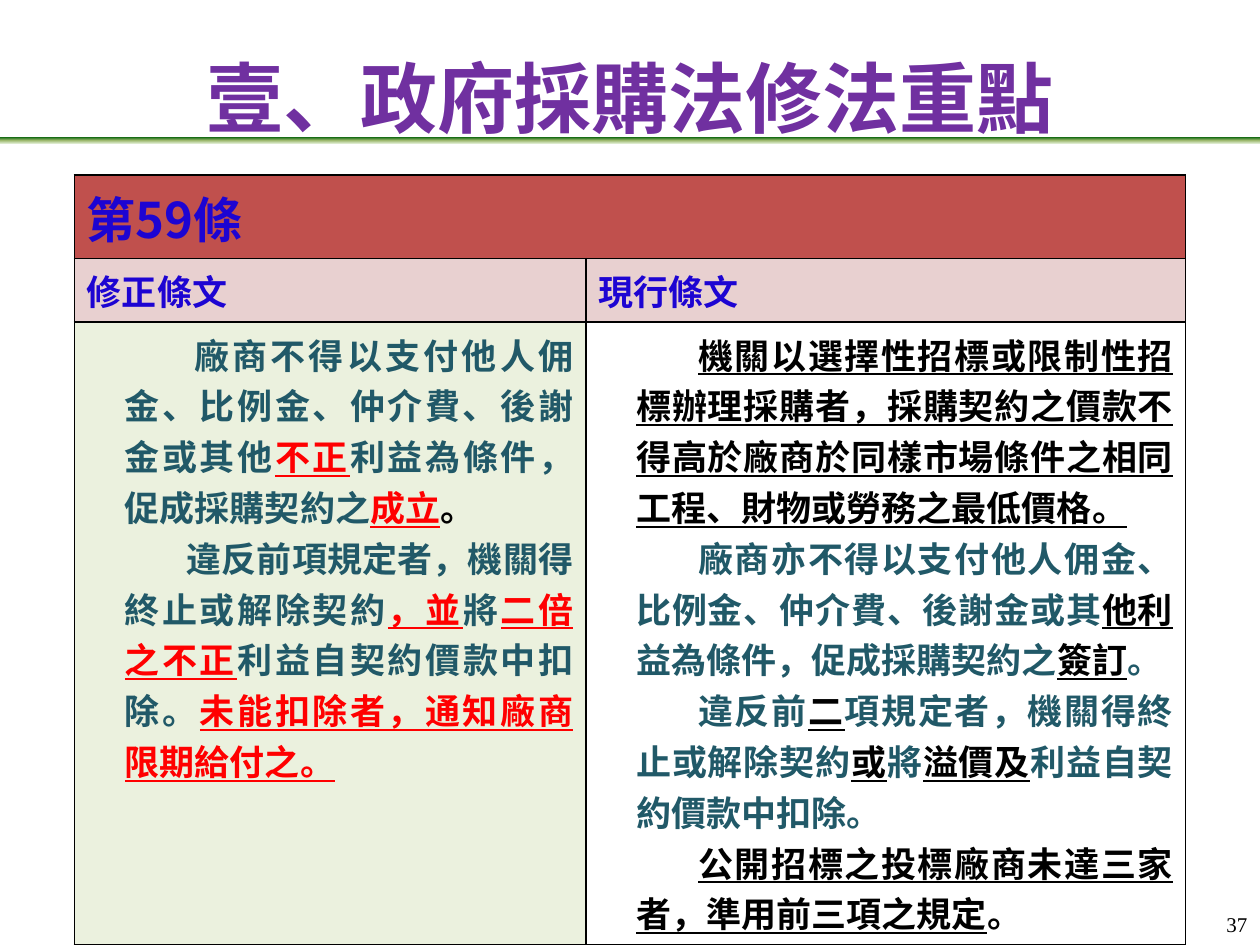
from lxml import etree
from pptx import Presentation
from pptx.dml.color import RGBColor
from pptx.enum.shapes import MSO_SHAPE
from pptx.enum.text import MSO_ANCHOR, PP_ALIGN
from pptx.oxml.ns import qn
from pptx.util import Inches, Pt

RECTANGLE = MSO_SHAPE.RECTANGLE
MIDDLE, BOTTOM = MSO_ANCHOR.MIDDLE, MSO_ANCHOR.BOTTOM
LEFT, CENTER, RIGHT, JUSTIFY = PP_ALIGN.LEFT, PP_ALIGN.CENTER, PP_ALIGN.RIGHT, PP_ALIGN.JUSTIFY
HEADING_FONT, NUMBER_FONT = "Noto Sans CJK SC", "Times New Roman"
BLACK, RED, TEAL, BLUE, PURPLE = "000000", "FF0000", "215968", "1D04D2", "7030A0"
BAR_STOPS = [(0, "156B13"), (50, "9CB86E"), (100, "DDEBCF")]
COLUMN_WIDTHS = [4.06, 4.76]
ROW_HEIGHTS = [0.66, 0.5, 4.94]
FIRST_LINE = 0.49

AMENDED = [
    (0.55, [("廠商不得以支付他人佣金、比例金、仲介費、後謝金或其他", TEAL, False),
            ("不正", RED, True),
            ("利益為條件，促成採購契約之", TEAL, False),
            ("成立", RED, True),
            ("。", BLACK, False)]),
    (FIRST_LINE, [("違反前項規定者，機關得終止或解除契約", TEAL, False),
                  ("，並", RED, True),
                  ("將", TEAL, False),
                  ("二倍之不正", RED, True),
                  ("利益自契約價款中扣除。", TEAL, False),
                  ("未能扣除者，通知廠商限期給付之。", RED, True)]),
]
CURRENT = [
    (FIRST_LINE, [("機關以選擇性招標或限制性招標辦理採購者，採購契約之價款不得高於廠商於"
                   "同樣市場條件之相同工程、財物或勞務之最低價格。", BLACK, True)]),
    (FIRST_LINE, [("廠商亦不得以支付他人佣金、比例金、仲介費、後謝金或其", TEAL, False),
                  ("他利", BLACK, True),
                  ("益為條件，促成採購契約之", TEAL, False),
                  ("簽訂", BLACK, True),
                  ("。", TEAL, False)]),
    (FIRST_LINE, [("違反前", TEAL, False),
                  ("二", BLACK, True),
                  ("項規定者，機關得終止或解除契約", TEAL, False),
                  ("或", BLACK, True),
                  ("將", TEAL, False),
                  ("溢價及", BLACK, True),
                  ("利益自契約價款中扣除。", TEAL, False)]),
    (FIRST_LINE, [("公開招標之投標廠商未達三家者，準用前三項之規定", BLACK, True),
                  ("。", BLACK, False)]),
]


def color(value):
    return RGBColor.from_string(value)


def add_run(paragraph, text, size, value, bold=True, underline=False, font_name=HEADING_FONT):
    run = paragraph.add_run()
    run.text = text
    font = run.font
    font.size, font.bold, font.underline, font.name = Pt(size), bold, underline, font_name
    font.color.rgb = color(value)
    properties = run._r.get_or_add_rPr()
    etree.SubElement(properties, qn("a:ea")).set("typeface", font_name)


def add_bar(slide, box):
    bar = slide.shapes.add_shape(RECTANGLE, *map(Inches, box))
    bar.shadow.inherit = False
    bar.line.fill.background()
    bar.fill.gradient()
    gradient = bar.element.spPr.find(qn("a:gradFill"))
    stops = gradient.find(qn("a:gsLst"))
    for stop in list(stops):
        stops.remove(stop)
    for position, value in BAR_STOPS:
        stop = etree.SubElement(stops, qn("a:gs"), pos=str(position * 1000))
        etree.SubElement(stop, qn("a:srgbClr"), val=value)
    gradient.find(qn("a:lin")).set("ang", str(90 * 60000))
    slide.shapes.title.element.addprevious(bar.element)


def add_title(slide, box):
    title = slide.shapes.title
    title.left, title.top, title.width, title.height = map(Inches, box)
    frame = title.text_frame
    frame.vertical_anchor = MIDDLE
    frame.word_wrap = True
    paragraph = frame.paragraphs[0]
    paragraph.alignment = CENTER
    add_run(paragraph, "壹、政府採購法修法重點", 44, PURPLE)


def add_borders(cell):
    properties = cell._tc.get_or_add_tcPr()
    for index, side in enumerate(["a:lnL", "a:lnR", "a:lnT", "a:lnB"]):
        line = etree.Element(qn(side), w=str(Pt(1)))
        fill = etree.SubElement(line, qn("a:solidFill"))
        etree.SubElement(fill, qn("a:srgbClr"), val=BLACK)
        properties.insert(index, line)


def fill_cell(cell, paragraphs, size, background=None, alignment=LEFT, margin=0):
    if background:
        cell.fill.solid()
        cell.fill.fore_color.rgb = color(background)
    else:
        cell.fill.background()
    frame = cell.text_frame
    for index, (indent, runs) in enumerate(paragraphs):
        paragraph = frame.add_paragraph() if index else frame.paragraphs[0]
        paragraph.alignment = alignment
        properties = paragraph._p.get_or_add_pPr()
        properties.set("marL", str(Inches(margin)))
        properties.set("indent", str(Inches(indent)))
        for text, value, underline in runs:
            add_run(paragraph, text, size, value, underline=underline)


def add_comparison(slide, left, top):
    size = Inches(sum(COLUMN_WIDTHS)), Inches(sum(ROW_HEIGHTS))
    table = slide.shapes.add_table(len(ROW_HEIGHTS), len(COLUMN_WIDTHS),
                                   Inches(left), Inches(top), *size).table
    for column, width in zip(table.columns, COLUMN_WIDTHS):
        column.width = Inches(width)
    for row, height in zip(table.rows, ROW_HEIGHTS):
        row.height = Inches(height)
    table.cell(0, 0).merge(table.cell(0, 1))
    fill_cell(table.cell(0, 0), [(0, [("第59條", BLUE, False)])], 28, "C0504D")
    columns = [("修正條文", AMENDED, "EBF1DE"), ("現行條文", CURRENT, None)]
    for index, (heading, article, background) in enumerate(columns):
        fill_cell(table.cell(1, index), [(0, [(heading, BLUE, False)])], 20, "E8D0D0")
        fill_cell(table.cell(2, index), article, 20, background, JUSTIFY, 0.3)
    for cell in table.iter_cells():
        add_borders(cell)


def add_page_number(slide, box):
    frame = slide.shapes.add_textbox(*map(Inches, box)).text_frame
    frame.word_wrap = True
    frame.vertical_anchor = BOTTOM
    frame.margin_left = frame.margin_right = Inches(0.02)
    frame.margin_top = frame.margin_bottom = 0
    paragraph = frame.paragraphs[0]
    paragraph.alignment = RIGHT
    add_run(paragraph, "37", 12, BLACK, bold=False, font_name=NUMBER_FONT)


def main():
    presentation = Presentation()
    presentation.slide_width, presentation.slide_height = Inches(10), Inches(7.5)
    slide = presentation.slides.add_slide(presentation.slide_layouts[5])
    add_title(slide, (0.28, 0.3, 9.45, 0.93))
    add_bar(slide, (0, 1.09, 10, 0.05))
    add_comparison(slide, 0.59, 1.39)
    add_page_number(slide, (9.37, 7.04, 0.55, 0.39))
    presentation.save("out.pptx")


if __name__ == "__main__":
    main()
